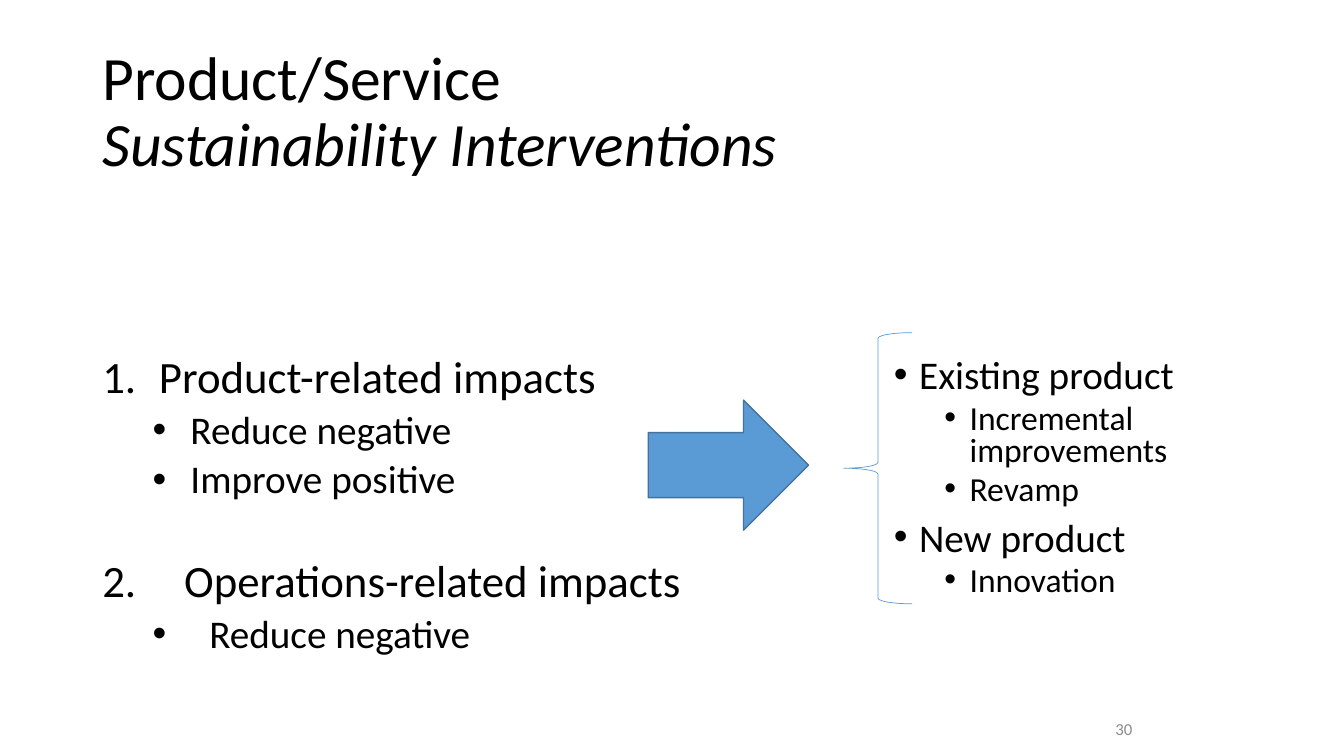
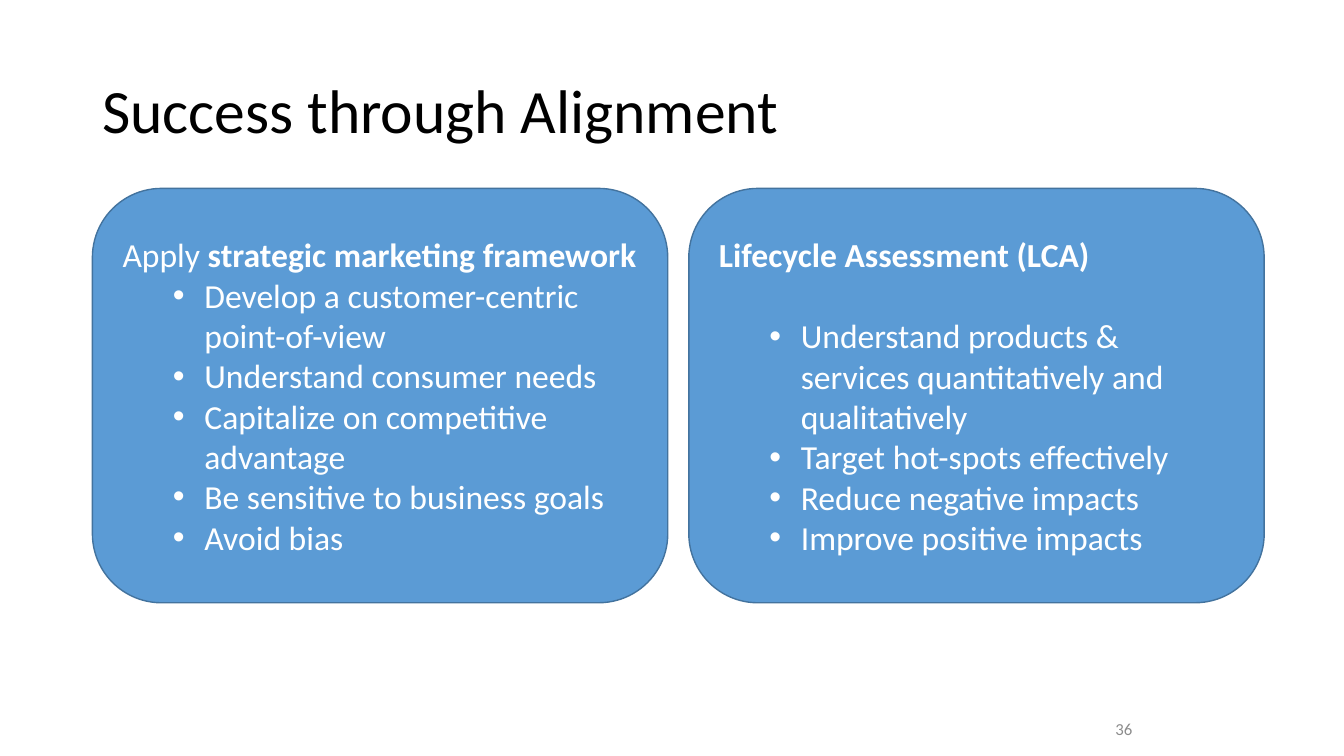
from collections import namedtuple

from lxml.etree import SubElement
from pptx import Presentation
from pptx.dml.color import RGBColor
from pptx.enum.shapes import MSO_SHAPE as Preset
from pptx.enum.text import MSO_ANCHOR as Anchor, PP_ALIGN as Align
from pptx.oxml.ns import qn
from pptx.util import Pt

BLACK = RGBColor(0x00, 0x00, 0x00)
WHITE = RGBColor(0xFF, 0xFF, 0xFF)
GREY = RGBColor(0x8C, 0x8C, 0x8C)
BLUE = RGBColor(0x5B, 0x9B, 0xD5)
DARK_BLUE = RGBColor(0x43, 0x73, 0x9E)
FONT = "Calibri"

Style = namedtuple("Style", "size color spacing left hang before mark",
                   defaults=(1, 0, 0, 0, None))

TITLE = Style(44, BLACK, 0.9)
NUMBER = Style(12, GREY)
IMPACT_ONE = Style(32, BLACK, 0.9, 40.5, 40.5, 5, 1)
IMPACT_TWO = Style(32, BLACK, 0.9, 58.5, 58.5, 40.7, 2)
ACTION = Style(28, BLACK, 0.9, 63, 27, 5, "•")
WIDE_ACTION = ACTION._replace(left=76.5, hang=40.5)
PRODUCT = Style(28, BLACK, 0.8, 18, 18, 10, "•")
CHANGE = Style(24, BLACK, 0.8, 54, 18, 5, "•")
CARD_HEAD = Style(24, WHITE)
CARD_ITEM = Style(24, WHITE, 1, 58.5, 22.5, 0, "•")
CARD_FIRST_ITEM = CARD_ITEM._replace(before=29.3)

INTERVENTIONS_TITLE = [("Product/Service\v", ""), ("Sustainability Interventions", "italic")]
IMPACTS = [
    ("Product-related impacts", IMPACT_ONE),
    ("Reduce negative", ACTION),
    ("Improve positive", ACTION),
    ("Operations-related impacts", IMPACT_TWO),
    ("Reduce negative", WIDE_ACTION),
]
PRODUCTS = [
    ("Existing product", PRODUCT),
    ("Incremental improvements", CHANGE),
    ("Revamp", CHANGE),
    ("New product", PRODUCT),
    ("Innovation", CHANGE),
]
CARDS = [
    [
        ([("Apply ", ""), ("strategic marketing framework", "bold")], CARD_HEAD),
        ("Develop a customer-centric point-of-view", CARD_ITEM),
        ("Understand consumer needs", CARD_ITEM),
        ("Capitalize on competitive advantage", CARD_ITEM),
        ("Be sensitive to business goals", CARD_ITEM),
        ("Avoid bias", CARD_ITEM),
    ],
    [
        ([("Lifecycle Assessment (LCA)", "bold")], CARD_HEAD),
        ("Understand products & services quantitatively and qualitatively", CARD_FIRST_ITEM),
        ("Target hot-spots effectively", CARD_ITEM),
        ("Reduce negative impacts", CARD_ITEM),
        ("Improve positive impacts", CARD_ITEM),
    ],
]
CARD_LEFT, CARD_TOP, CARD_WIDTH, CARD_HEIGHT, CARD_GAP = 66, 134.6, 411, 296, 15


def add_mark(para, style):
    properties = para._p.get_or_add_pPr()
    properties.set("marL", str(Pt(style.left)))
    properties.set("indent", str(-Pt(style.hang)))
    if isinstance(style.mark, int):
        SubElement(properties, qn("a:buFont"), typeface="+mj-lt")
        SubElement(properties, qn("a:buAutoNum"), type="arabicPeriod", startAt=str(style.mark))
    else:
        SubElement(properties, qn("a:buFont"), typeface="Arial")
        SubElement(properties, qn("a:buChar"), char=style.mark)


def write(frame, lines, anchor=Anchor.TOP, align=Align.LEFT):
    frame.word_wrap = True
    frame.vertical_anchor = anchor
    for index, (content, style) in enumerate(lines):
        para = frame.add_paragraph() if index else frame.paragraphs[0]
        if style.mark:
            add_mark(para, style)
        para.alignment = align
        para.line_spacing = style.spacing
        para.space_before = Pt(style.before if index else 0)
        para.font.name = FONT
        para.font.size = Pt(style.size)
        para.font.color.rgb = style.color
        for text, emphasis in [(content, "")] if isinstance(content, str) else content:
            span = para.add_run()
            span.text = text.rstrip("\v")
            if emphasis:
                setattr(span.font, emphasis, True)
            if text.endswith("\v"):
                para.add_line_break()


def add_text(page, place, lines, **layout):
    box = page.shapes.add_textbox(*map(Pt, place))
    write(box.text_frame, lines, **layout)


def add_figure(page, preset, place, line, weight, fill=None):
    figure = page.shapes.add_shape(preset, *map(Pt, place))
    figure.shadow.inherit = False
    figure.line.color.rgb = line
    figure.line.width = Pt(weight)
    if fill is None:
        figure.fill.background()
    else:
        figure.fill.solid()
        figure.fill.fore_color.rgb = fill
    return figure


def add_page(deck, title, number):
    page = deck.slides.add_slide(deck.slide_layouts[6])
    add_text(page, (66, 28.8, 828, 104.4), [(title, TITLE)], anchor=Anchor.MIDDLE)
    add_text(page, (648, 506, 168, 28.8), [(number, NUMBER)],
             anchor=Anchor.MIDDLE, align=Align.RIGHT)
    return page


def build_interventions(deck):
    page = add_page(deck, INTERVENTIONS_TITLE, "30")
    add_text(page, (66, 250, 850, 256), IMPACTS)
    add_text(page, (631.5, 253.4, 309.6, 189.4), PRODUCTS)
    add_figure(page, Preset.RIGHT_ARROW, (463, 285.8, 114.5, 92.9), DARK_BLUE, 1, BLUE)
    add_figure(page, Preset.LEFT_BRACE, (602.6, 237.6, 49, 193.7), BLUE, 0.5)


def build_alignment(deck):
    page = add_page(deck, "Success through Alignment", "36")
    for column, lines in enumerate(CARDS):
        left = CARD_LEFT + column * (CARD_WIDTH + CARD_GAP)
        card = add_figure(page, Preset.ROUNDED_RECTANGLE,
                          (left, CARD_TOP, CARD_WIDTH, CARD_HEIGHT), DARK_BLUE, 1, BLUE)
        write(card.text_frame, lines, anchor=Anchor.MIDDLE)


def main():
    deck = Presentation()
    deck.slide_width, deck.slide_height = Pt(960), Pt(540)
    build_interventions(deck)
    build_alignment(deck)
    deck.save("out.pptx")


if __name__ == "__main__":
    main()
